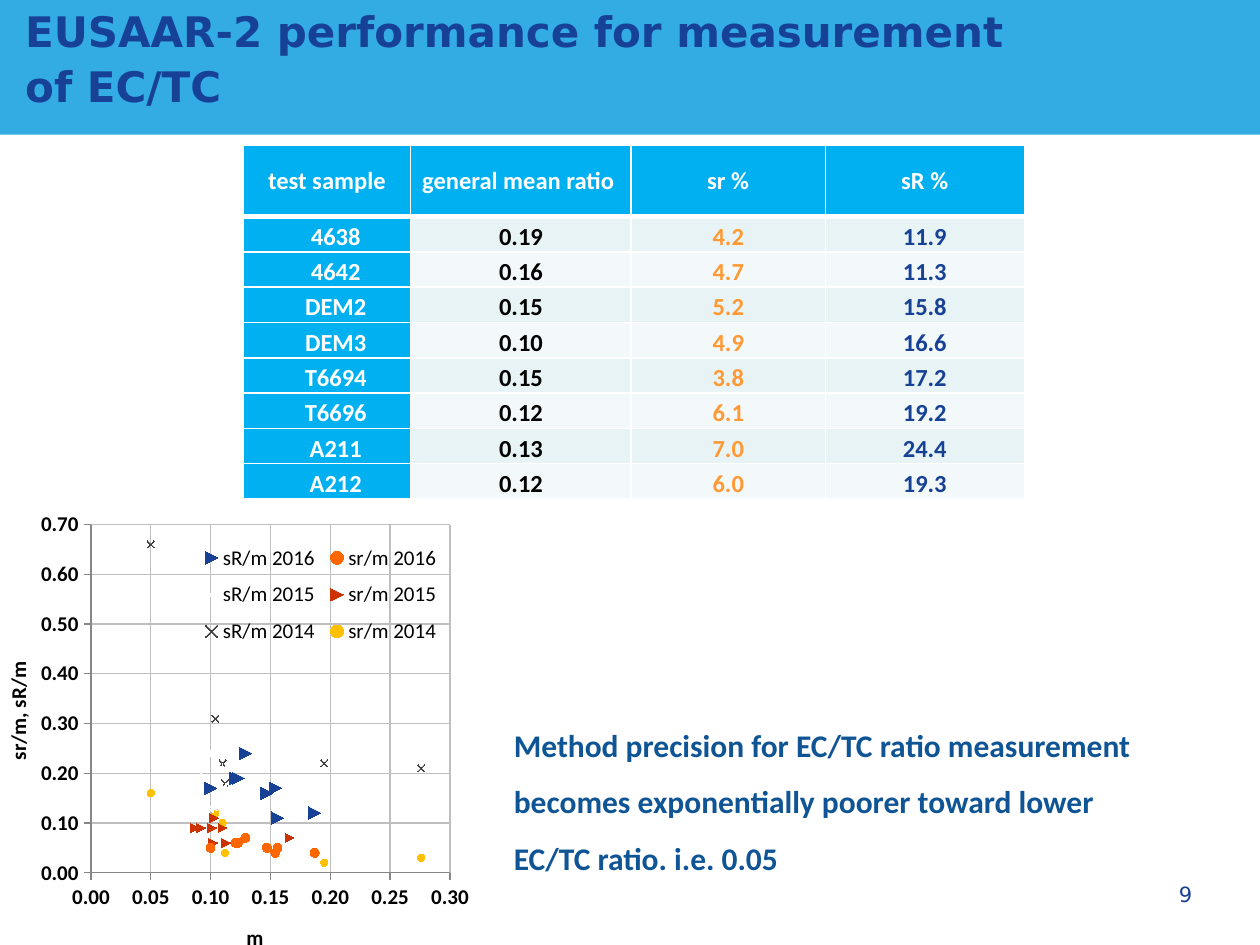
from lxml.etree import SubElement
from pptx import Presentation
from pptx.chart.data import XyChartData
from pptx.dml.color import RGBColor
from pptx.enum.chart import XL_CHART_TYPE, XL_LEGEND_POSITION, XL_MARKER_STYLE, XL_TICK_MARK
from pptx.enum.shapes import MSO_SHAPE
from pptx.enum.text import MSO_ANCHOR, PP_ALIGN
from pptx.oxml.ns import qn
from pptx.util import Inches, Pt

COLORS = {
    "band": "33ACE3", "navy": "164194", "header": "00B0F0", "white": "FFFFFF",
    "black": "000000", "amber": "FF9933", "row_dark": "E7F3F4", "row_light": "F3F9FA",
    "message": "0F5494", "grid": "BFBFBF", "axis": "868686", "orange": "FF6600",
    "red": "CC3300", "cross": "404040", "yellow": "FFC000",
}
HEADINGS = ["test sample", "general mean ratio ", "sr %", "sR %"]
SAMPLES = [
    ("4638", "0.19", "4.2", "11.9"),
    ("4642", "0.16", "4.7", "11.3"),
    ("DEM2", "0.15", "5.2", "15.8"),
    ("DEM3", "0.10", "4.9", "16.6"),
    ("T6694", "0.15", "3.8", "17.2"),
    ("T6696", "0.12", "6.1", "19.2"),
    ("A211", "0.13", "7.0", "24.4"),
    ("A212", "0.12", "6.0", "19.3"),
]
MEANS = {
    "2016": [0.187, 0.156, 0.147, 0.1, 0.154, 0.123, 0.129, 0.121],
    "2015": [0.087, 0.092, 0.102, 0.113, 0.103, 0.101, 0.11, 0.166],
    "2014": [0.112, 0.05, 0.104, 0.11, 0.276, 0.195],
}
PRECISION = [
    ("sR/m 2016", [0.12, 0.11, 0.16, 0.17, 0.17, 0.19, 0.24, 0.19], XL_MARKER_STYLE.DOT, 7, "navy"),
    ("sr/m 2016", [0.04, 0.05, 0.05, 0.05, 0.04, 0.06, 0.07, 0.06], XL_MARKER_STYLE.CIRCLE, 5, "orange"),
    ("sR/m 2015", [0.26, 0.19, 0.13, 0.17, 0.24, 0.24, 0.21, 0.17], XL_MARKER_STYLE.STAR, 5, "white"),
    ("sr/m 2015", [0.09, 0.09, 0.06, 0.06, 0.11, 0.09, 0.09, 0.07], XL_MARKER_STYLE.AUTOMATIC, 5, "red"),
    ("sR/m 2014", [0.18, 0.66, 0.31, 0.22, 0.21, 0.22], XL_MARKER_STYLE.X, 4, "cross"),
    ("sr/m 2014", [0.04, 0.16, 0.12, 0.1, 0.03, 0.02], XL_MARKER_STYLE.CIRCLE, 4, "yellow"),
]


def rgb(name):
    """Return the palette colour of that name."""
    return RGBColor.from_string(COLORS[name])


def add_run(paragraph, text, size, color, font="Calibri", bold=True):
    """Append a formatted run to a paragraph."""
    run = paragraph.add_run()
    run.text = text
    run.font.size, run.font.name, run.font.bold = Pt(size), font, bold
    run.font.color.rgb = rgb(color)


def add_band(slide):
    """Place the title band behind everything else."""
    band = slide.shapes.add_shape(MSO_SHAPE.RECTANGLE, 0, 0, Inches(10), Inches(1.07))
    band.shadow.inherit = False
    band.fill.solid()
    band.fill.fore_color.rgb = rgb("band")
    band.line.fill.background()
    slide.shapes._spTree.insert(2, band._element)


def set_title(slide, text):
    """Fill and position the title placeholder."""
    title = slide.shapes.title
    title.left, title.top, title.width, title.height = map(Inches, (0.2, 0, 8.19, 0.51))
    frame = title.text_frame
    frame.word_wrap = True
    frame.vertical_anchor = MSO_ANCHOR.TOP
    frame.margin_left = frame.margin_right = frame.margin_top = frame.margin_bottom = 0
    paragraph = frame.paragraphs[0]
    paragraph.alignment, paragraph.line_spacing = PP_ALIGN.LEFT, 1.1
    add_run(paragraph, text, 24, "navy", "DejaVu Sans")


def add_text(slide, box, text, size, color, font="Calibri", bold=True):
    """Add a wrapping text box and return its shape."""
    label = slide.shapes.add_textbox(*map(Inches, box))
    label.text_frame.word_wrap = True
    add_run(label.text_frame.paragraphs[0], text, size, color, font, bold)
    return label


def set_borders(cell, top, bottom):
    """Draw white cell borders with the given top and bottom widths."""
    properties = cell._tc.get_or_add_tcPr()
    for side, width in (("L", 1), ("R", 1), ("T", top), ("B", bottom)):
        line = SubElement(properties, qn(f"a:ln{side}"), w=str(Pt(width)))
        fill = SubElement(line, qn("a:solidFill"))
        SubElement(fill, qn("a:srgbClr"), val=COLORS["white"])


def fill_cell(cell, text, row, column):
    """Write and style one cell according to its place in the table."""
    set_borders(cell, 3 if row == 1 else 1, 3 if row == 0 else 1)
    stripe = "row_dark" if row % 2 else "row_light"
    cell.fill.solid()
    cell.fill.fore_color.rgb = rgb("header" if row == 0 or column == 0 else stripe)
    cell.vertical_anchor = MSO_ANCHOR.BOTTOM if row else MSO_ANCHOR.MIDDLE
    cell.margin_left = cell.margin_right = Inches(0.07)
    cell.margin_top = cell.margin_bottom = 0
    paragraph = cell.text_frame.paragraphs[0]
    paragraph.alignment = PP_ALIGN.CENTER
    if row and column == 0:
        paragraph._p.get_or_add_pPr().set("indent", str(Inches(0.14)))
    color = ("white", "black", "amber", "navy")[column] if row else "white"
    add_run(paragraph, text, 14, color)


def add_sample_table(slide):
    """Add the table of repeatability and reproducibility by sample."""
    rows = [HEADINGS, *SAMPLES]
    box = map(Inches, (1.93, 1.15, 6.2, 2.81))
    table = slide.shapes.add_table(len(rows), len(HEADINGS), *box).table
    for column, width in zip(table.columns, (1.33, 1.75, 1.54, 1.58)):
        column.width = Inches(width)
    for r, values in enumerate(rows):
        table.rows[r].height = Inches(0.28 if r else 0.57)
        for c, value in enumerate(values):
            fill_cell(table.cell(r, c), value, r, c)


def make_layout(parent, index, box, inner=False):
    """Give a chart part a manual layout in fractions of the chart."""
    for old in parent.findall(qn("c:layout")):
        parent.remove(old)
    layout = SubElement(parent, qn("c:layout"))
    manual = SubElement(layout, qn("c:manualLayout"))
    if inner:
        SubElement(manual, qn("c:layoutTarget"), val="inner")
    for key in ("xMode", "yMode"):
        SubElement(manual, qn(f"c:{key}"), val="edge")
    for key, value in zip("xywh", box):
        SubElement(manual, qn(f"c:{key}"), val=str(value))
    parent.insert(index, layout)


def style_axis(axis, title, maximum, step):
    """Set scale, grid, ticks and title of a chart axis."""
    axis.minimum_scale, axis.maximum_scale, axis.major_unit = 0, maximum, step
    axis.major_tick_mark, axis.minor_tick_mark = XL_TICK_MARK.OUTSIDE, XL_TICK_MARK.NONE
    axis.tick_labels.number_format = "0.00"
    axis.tick_labels.number_format_is_linked = False
    axis.has_major_gridlines = True
    axis.major_gridlines.format.line.color.rgb = rgb("grid")
    axis.major_gridlines.format.line.width = Pt(0.75)
    axis.format.line.color.rgb = rgb("axis")
    add_run(axis.axis_title.text_frame.paragraphs[0], title, 12, "black")


def add_precision_chart(slide):
    """Add the scatter chart of relative precision against mean ratio."""
    data = XyChartData()
    for name, ratios, *_ in PRECISION:
        series = data.add_series(name)
        for mean, ratio in zip(MEANS[name[-4:]], ratios):
            series.add_data_point(mean, ratio)
    box = map(Inches, (0, 4.02, 3.8, 3.59))
    chart = slide.shapes.add_chart(XL_CHART_TYPE.XY_SCATTER, *box, data).chart
    chart.has_title = False
    chart.font.size, chart.font.name, chart.font.bold = Pt(12), "Calibri", True
    chart.font.color.rgb = rgb("black")
    chart.plots[0].vary_by_categories = False
    style_axis(chart.category_axis, "m", 0.3, 0.05)
    style_axis(chart.value_axis, "sr/m, sR/m", 0.7, 0.1)
    for series, (_, _, symbol, size, color) in zip(chart.plots[0].series, PRECISION):
        series.smooth = False
        series.format.line.fill.background()
        series.marker.style, series.marker.size = symbol, size
        series.marker.format.fill.solid()
        series.marker.format.fill.fore_color.rgb = rgb(color)
        series.marker.format.line.color.rgb = rgb(color)
    chart.has_legend = True
    legend = chart.legend
    legend.position, legend.include_in_layout = XL_LEGEND_POSITION.RIGHT, True
    legend.font.size, legend.font.name, legend.font.bold = Pt(12), "Calibri", False
    make_layout(legend._element, 1, (0.41, 0.06, 0.52, 0.27))
    plot_area = chart._chartSpace.chart.plotArea
    make_layout(plot_area, 0, (0.19, 0.04, 0.75, 0.77), inner=True)


def main():
    """Build and save the slide."""
    deck = Presentation()
    deck.slide_width, deck.slide_height = Inches(10), Inches(7.5)
    slide = deck.slides.add_slide(deck.slide_layouts[5])
    add_band(slide)
    set_title(slide, "EUSAAR-2 performance for measurement of EC/TC")
    add_sample_table(slide)
    add_precision_chart(slide)
    message = add_text(
        slide, (3.98, 5.56, 5.12, 1.46),
        "Method precision for EC/TC ratio measurement becomes exponentially poorer "
        "toward lower EC/TC ratio. i.e. 0.05", 18, "message")
    message.text_frame.paragraphs[0].line_spacing = 1.5
    number = add_text(slide, (7.23, 6.9, 2.33, 0.4), "9", 12, "navy", "DejaVu Sans", False)
    number.text_frame.vertical_anchor = MSO_ANCHOR.MIDDLE
    number.text_frame.margin_top = number.text_frame.margin_bottom = 0
    number.text_frame.paragraphs[0].alignment = PP_ALIGN.RIGHT
    deck.save("out.pptx")


if __name__ == "__main__":
    main()
